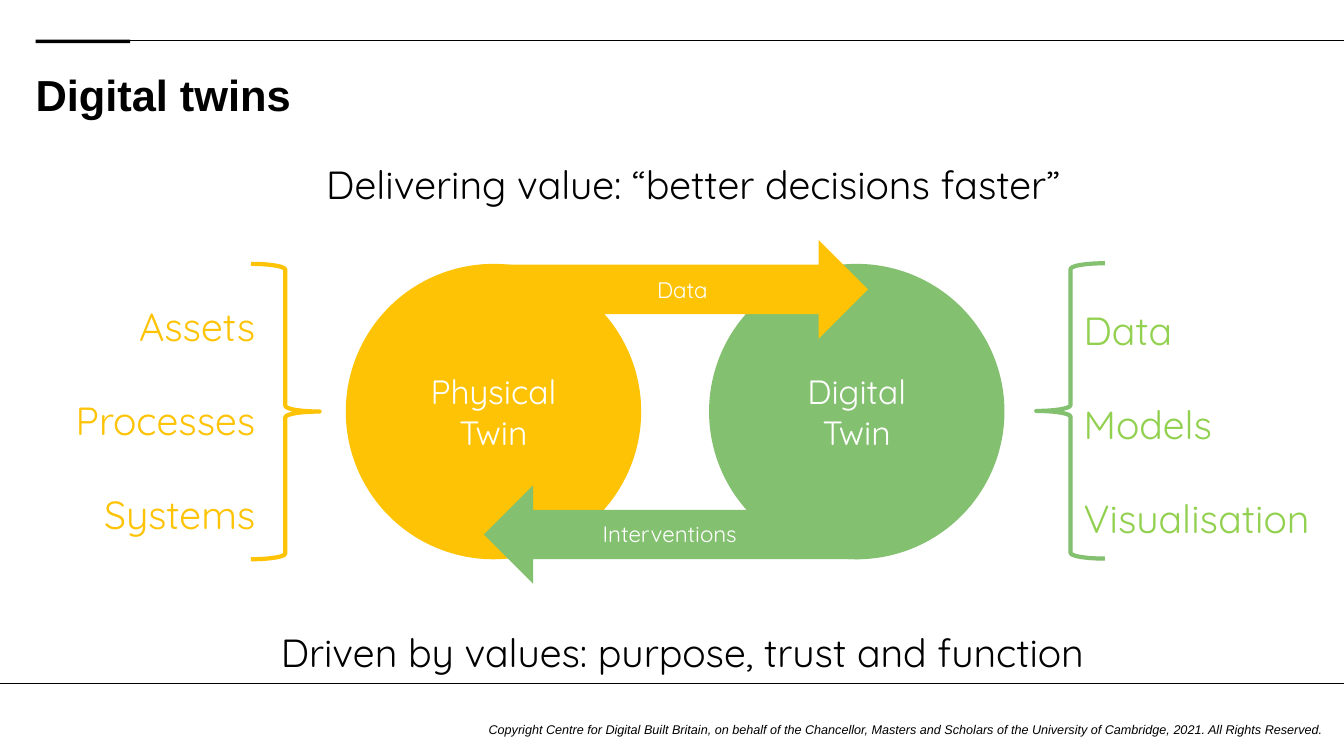
from pptx import Presentation
from pptx.dml.color import RGBColor
from pptx.enum.shapes import MSO_CONNECTOR, MSO_SHAPE
from pptx.enum.text import MSO_ANCHOR, PP_ALIGN
from pptx.oxml.ns import qn
from pptx.util import Pt
from lxml.etree import SubElement

BLACK = RGBColor(0x00, 0x00, 0x00)
WHITE = RGBColor(0xFF, 0xFF, 0xFF)
YELLOW = RGBColor(0xFD, 0xC3, 0x04)
GREEN = RGBColor(0x83, 0xC0, 0x70)
LIME = RGBColor(0x92, 0xD0, 0x50)

prs = Presentation()
prs.slide_width, prs.slide_height = Pt(960), Pt(540)
s = prs.slides.add_slide(prs.slide_layouts[6])


def add_shape(kind, box, fill=None, line=None, rotation=0):
    sp = s.shapes.add_shape(kind, *map(Pt, box))
    sp.shadow.inherit = False
    sp.rotation = rotation
    if fill is None:
        sp.fill.background()
    else:
        sp.fill.solid()
        sp.fill.fore_color.rgb = fill
    if line is None:
        sp.line.fill.background()
    else:
        sp.line.color.rgb = line
        sp.line.width = Pt(3)
    return sp


def add_text(text, box=None, sp=None, size=28, color=BLACK, font="Quicksand",
             align=PP_ALIGN.CENTER, anchor=MSO_ANCHOR.MIDDLE, spacing=1.0,
             bold=False, italic=False, inset=True):
    if sp is None:
        sp = s.shapes.add_textbox(*map(Pt, box))
    tf = sp.text_frame
    tf.word_wrap = True
    tf.vertical_anchor = anchor
    if not inset:
        tf.margin_left = tf.margin_right = tf.margin_top = tf.margin_bottom = Pt(0)
    for i, line in enumerate(text.split("\n")):
        p = tf.add_paragraph() if i else tf.paragraphs[0]
        p.alignment = align
        p.line_spacing = spacing
        r = p.add_run()
        r.text = line
        r.font.name = font
        r.font.size = Pt(size)
        r.font.bold = bold
        r.font.italic = italic
        r.font.color.rgb = color


for left, y in ((25.4, 28.4), (0, 488.2)):
    rule = s.shapes.add_connector(MSO_CONNECTOR.STRAIGHT, Pt(left), Pt(y), Pt(960), Pt(y))
    rule.line.color.rgb = BLACK
    rule.line.width = Pt(0.12)
    SubElement(rule._element.spPr, qn("a:effectLst"))
add_shape(MSO_SHAPE.RECTANGLE, (25.4, 28.4, 67.5, 2.5), fill=BLACK)

add_text("Digital twins", (25.4, 52.6, 908.6, 78.5), size=31, font="Arial", bold=True,
         align=PP_ALIGN.LEFT, anchor=MSO_ANCHOR.TOP, spacing=0.9, inset=False)

for name, left, color in (("Physical\nTwin", 247, YELLOW), ("Digital\nTwin", 506.5, GREEN)):
    twin = add_shape(MSO_SHAPE.OVAL, (left, 188.5, 211, 211), fill=color)
    add_text(name, sp=twin, size=24, color=WHITE)

for left, top, color, rotation in ((349.5, 171.5, YELLOW, 0), (345.6, 346.5, GREEN, 180)):
    add_shape(MSO_SHAPE.RIGHT_ARROW, (left, top, 270.5, 70.5), fill=color, rotation=rotation)
add_text("Data", (453.6, 193.7, 67.7, 26.6), size=16, color=WHITE, anchor=MSO_ANCHOR.TOP)
add_text("Interventions", (407.5, 368, 141.8, 26.6), size=16, color=WHITE, anchor=MSO_ANCHOR.TOP)

for left, top, color, rotation in ((179.3, 188.5, YELLOW, 0), (740.2, 188, GREEN, 180)):
    add_shape(MSO_SHAPE.RIGHT_BRACE, (left, top, 49, 211), line=color, rotation=rotation)
add_text("Assets\nProcesses\nSystems", (38.2, 183, 151.2, 200), color=YELLOW,
         align=PP_ALIGN.RIGHT, spacing=2.0)
add_text("Data\nModels\nVisualisation", (767, 185.8, 192.2, 200), color=LIME,
         align=PP_ALIGN.LEFT, spacing=2.0)

add_text("Driven by values: purpose, trust and function", (166.3, 417, 642.2, 64), spacing=2.0)
add_text("Delivering value: “better decisions faster”", (198, 82.8, 594, 64), spacing=2.0)

add_text("Copyright Centre for Digital Built Britain, on behalf of the Chancellor, Masters and "
         "Scholars of the University of Cambridge, 2021. All Rights Reserved.",
         (349, 517, 611, 20), size=9, font="Arial", italic=True,
         align=PP_ALIGN.LEFT, anchor=MSO_ANCHOR.TOP, spacing=0.9, inset=False)

prs.save("out.pptx")
